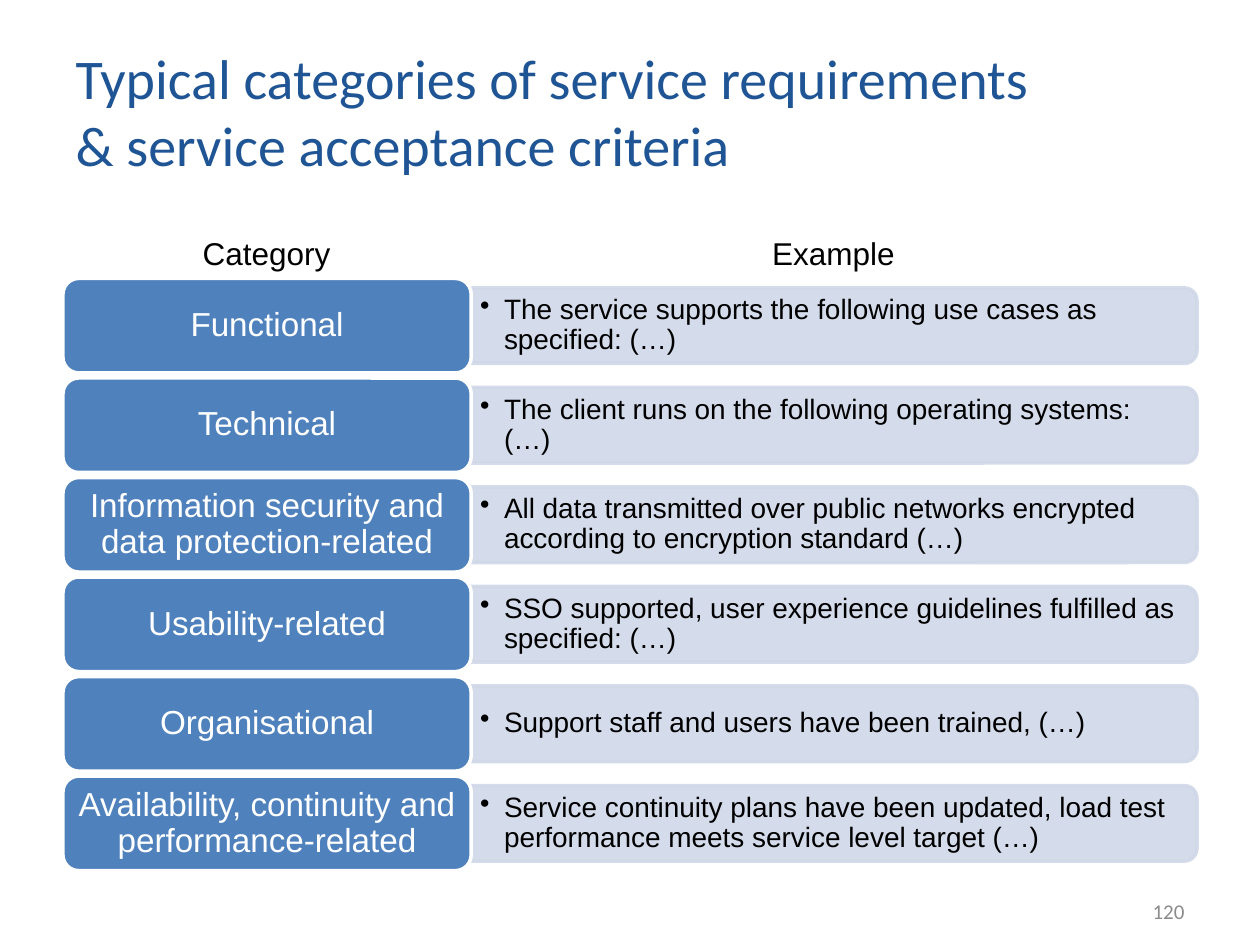
from dataclasses import dataclass
from typing import NamedTuple

from lxml.etree import SubElement
from pptx import Presentation
from pptx.dml.color import RGBColor
from pptx.enum.shapes import MSO_SHAPE as Shape
from pptx.enum.text import MSO_ANCHOR as Anchor, MSO_AUTO_SIZE as AutoSize, PP_ALIGN as Align
from pptx.oxml.ns import qn
from pptx.util import Inches, Pt


@dataclass(frozen=True)
class Theme:
    title: str = "205595"
    category: str = "4F81BD"
    example: str = "D0D8E8"
    white: str = "FFFFFF"
    black: str = "000000"
    grey: str = "8B8B8B"
    heading_font: str = "Calibri"
    body_font: str = "Arial"
    title_size: float = 32
    category_size: float = 19
    header_size: float = 18
    example_size: float = 16
    number_size: float = 12
    outline: float = 2
    example_opacity: int = 90


class Box(NamedTuple):
    left: float
    top: float
    width: float
    height: float

    def lengths(self) -> list:
        return [Inches(value) for value in self]


class Requirement(NamedTuple):
    category: str
    example: str


THEME = Theme()
REQUIREMENTS = [
    Requirement("Functional", "The service supports the following use cases as specified: (…)"),
    Requirement("Technical", "The client runs on the following operating systems: (…)"),
    Requirement("Information security and data protection-related",
                "All data transmitted over public networks encrypted "
                "according to encryption standard (…)"),
    Requirement("Usability-related",
                "SSO supported, user experience guidelines fulfilled as specified: (…)"),
    Requirement("Organisational", "Support staff and users have been trained, (…)"),
    Requirement("Availability, continuity and performance-related",
                "Service continuity plans have been updated, "
                "load test performance meets service level target (…)"),
]

# Row grid, in inches
LEFT, FIRST_TOP, PITCH = 0.5, 2.21, 0.79
CATEGORY_WIDTH, CATEGORY_HEIGHT = 3.24, 0.75
EXAMPLE_WIDTH, EXAMPLE_HEIGHT = 5.76, 0.6


def write(shape, text: str, size: float, color: str, font: str = THEME.body_font,
          align: Align = Align.LEFT, anchor: Anchor = Anchor.MIDDLE):
    """Set one paragraph of text, format its run and return the paragraph."""
    frame = shape.text_frame
    frame.text = text
    frame.word_wrap = True
    frame.auto_size = AutoSize.NONE
    frame.vertical_anchor = anchor
    paragraph = frame.paragraphs[0]
    paragraph.alignment = align
    for run in paragraph.runs:
        run.font.name = font
        run.font.size = Pt(size)
        run.font.color.rgb = RGBColor.from_string(color)
    return paragraph


def set_insets(shape, side: float, end: float) -> None:
    frame = shape.text_frame
    frame.margin_left = frame.margin_right = Inches(side)
    frame.margin_top = frame.margin_bottom = Inches(end)


def add_panel(slide, kind: Shape, box: Box, fill: str, line: str):
    panel = slide.shapes.add_shape(kind, *box.lengths())
    panel.shadow.inherit = False
    panel.fill.solid()
    panel.fill.fore_color.rgb = RGBColor.from_string(fill)
    panel.line.color.rgb = RGBColor.from_string(line)
    panel.line.width = Pt(THEME.outline)
    return panel


def set_opacity(panel, percent: int) -> None:
    for color in panel._element.spPr.iter(qn("a:srgbClr")):
        SubElement(color, qn("a:alpha"), val=str(percent * 1000))


def add_bullet(paragraph, indent: float) -> None:
    properties = paragraph._p.get_or_add_pPr()
    properties.set("marL", str(Inches(indent)))
    properties.set("indent", str(-Inches(indent)))
    SubElement(properties, qn("a:buChar"), char="•")


def add_example(slide, text: str, middle: float) -> None:
    # The bar is drawn upright and turned, so its rounded end faces right
    center = LEFT + CATEGORY_WIDTH + EXAMPLE_WIDTH / 2
    upright = Box(center - EXAMPLE_HEIGHT / 2, middle - EXAMPLE_WIDTH / 2,
                  EXAMPLE_HEIGHT, EXAMPLE_WIDTH)
    bar = add_panel(slide, Shape.ROUND_2_SAME_RECTANGLE, upright, THEME.example, THEME.example)
    bar.rotation = 90
    set_opacity(bar, THEME.example_opacity)

    label_box = Box(LEFT + CATEGORY_WIDTH, middle - 0.27, EXAMPLE_WIDTH - 0.03, 0.54)
    label = slide.shapes.add_textbox(*label_box.lengths())
    paragraph = write(label, text, THEME.example_size, THEME.black)
    set_insets(label, 0.07, 0.03)
    add_bullet(paragraph, 0.19)
    paragraph.line_spacing = 0.9


def add_category(slide, text: str, top: float) -> None:
    box = Box(LEFT, top, CATEGORY_WIDTH, CATEGORY_HEIGHT)
    panel = add_panel(slide, Shape.ROUNDED_RECTANGLE, box, THEME.category, THEME.white)
    paragraph = write(panel, text, THEME.category_size, THEME.white, align=Align.CENTER)
    set_insets(panel, 0.08, 0.04)
    paragraph.line_spacing = 0.9


def main() -> None:
    deck = Presentation()
    deck.slide_width, deck.slide_height = Inches(10), Inches(7.5)
    slide = deck.slides.add_slide(deck.slide_layouts[5])

    # Title
    title = slide.shapes.title
    title.left, title.top, title.width, title.height = Box(LEFT, 0.3, 8.04, 1.15).lengths()
    write(title, "Typical categories of service requirements & service acceptance criteria",
          THEME.title_size, THEME.title, THEME.heading_font)

    # Requirement rows
    for row, requirement in enumerate(REQUIREMENTS):
        top = FIRST_TOP + row * PITCH
        add_example(slide, requirement.example, top + CATEGORY_HEIGHT / 2)
        add_category(slide, requirement.category, top)

    # Column headers
    for header, left, width in (("Category", LEFT, 3.23), ("Example", 3.73, 5.77)):
        heading = slide.shapes.add_textbox(*Box(left, 1.81, width, 0.4).lengths())
        write(heading, header, THEME.header_size, THEME.black,
              align=Align.CENTER, anchor=Anchor.TOP)

    # Page number
    number = slide.shapes.add_textbox(*Box(7.17, 7.03, 2.33, 0.4).lengths())
    write(number, "120", THEME.number_size, THEME.grey, THEME.heading_font, Align.RIGHT)

    deck.save("out.pptx")


if __name__ == "__main__":
    main()
